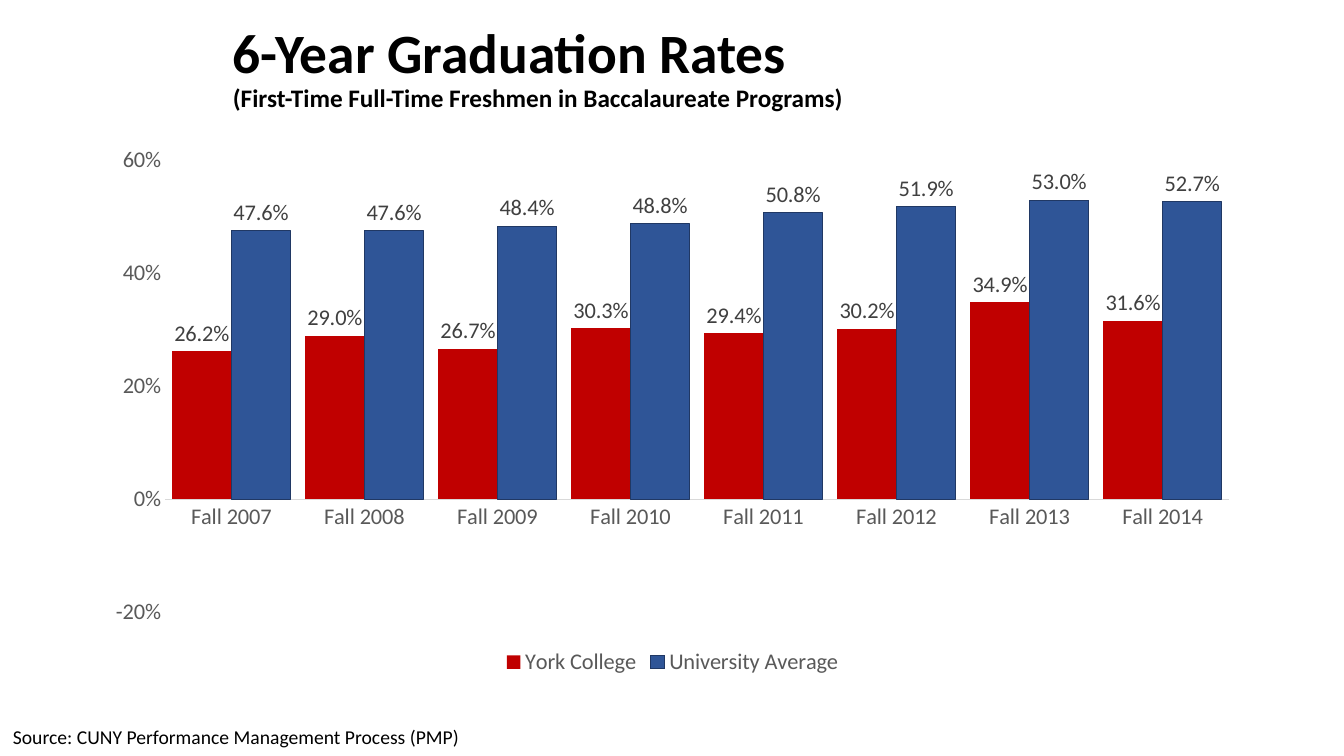
from pptx import Presentation
from pptx.chart.data import CategoryChartData
from pptx.dml.color import RGBColor
from pptx.enum.chart import XL_CHART_TYPE, XL_LABEL_POSITION, XL_LEGEND_POSITION, XL_TICK_MARK
from pptx.enum.text import MSO_ANCHOR, MSO_AUTO_SIZE, PP_ALIGN
from pptx.util import Inches, Pt

BLACK = RGBColor(0x00, 0x00, 0x00)
DARK = RGBColor(0x40, 0x40, 0x40)
GREY = RGBColor(0x59, 0x59, 0x59)
PALE = RGBColor(0xD9, 0xD9, 0xD9)
RED = RGBColor(0xC0, 0x00, 0x00)
BLUE = RGBColor(0x2F, 0x55, 0x97)
NAVY = RGBColor(0x20, 0x38, 0x64)

YEARS = range(2007, 2015)
RATES = [
    ("York College", RED, None, (0.262, 0.29, 0.267, 0.303, 0.294, 0.302, 0.349, 0.316)),
    ("University Average", BLUE, NAVY, (0.476, 0.476, 0.484, 0.488, 0.508, 0.519, 0.53, 0.527)),
]


def set_font(font, size, color, bold=False):
    font.name = "Calibri"
    font.size = Pt(size)
    font.bold = bold
    font.color.rgb = color


def add_title(slide, left, top, width, height):
    title = slide.shapes.title
    title.left, title.top = Inches(left), Inches(top)
    title.width, title.height = Inches(width), Inches(height)
    frame = title.text_frame
    frame.auto_size = MSO_AUTO_SIZE.NONE
    frame.vertical_anchor = MSO_ANCHOR.MIDDLE
    para = frame.paragraphs[0]
    para.text = "6-Year Graduation Rates\n(First-Time Full-Time Freshmen in Baccalaureate Programs)"
    para.alignment = PP_ALIGN.LEFT
    para.line_spacing = 0.9
    for run, size in zip(para.runs, (39.6, 18)):
        set_font(run.font, size, BLACK, True)


def add_rates(slide, left, top, width, height):
    data = CategoryChartData(number_format="0.0%")
    data.categories = [f"Fall {year}" for year in YEARS]
    for name, _, _, values in RATES:
        data.add_series(name, values)
    chart = slide.shapes.add_chart(
        XL_CHART_TYPE.COLUMN_CLUSTERED,
        Inches(left), Inches(top), Inches(width), Inches(height), data,
    ).chart
    set_font(chart.font, 16, BLACK)
    chart.has_title = False
    chart.has_legend = True
    chart.legend.position = XL_LEGEND_POSITION.BOTTOM
    chart.legend.include_in_layout = False
    set_font(chart.legend.font, 16, GREY)

    for axis in (chart.category_axis, chart.value_axis):
        axis.major_tick_mark = axis.minor_tick_mark = XL_TICK_MARK.NONE
        axis.has_major_gridlines = False
        set_font(axis.tick_labels.font, 16, GREY)
    base = chart.category_axis.format.line
    base.color.rgb = PALE
    base.width = Pt(0.75)
    scale = chart.value_axis
    scale.format.line.fill.background()
    scale.minimum_scale, scale.maximum_scale = -0.2, 0.6
    scale.major_unit = 0.2
    scale.tick_labels.number_format = "0%"
    scale.tick_labels.number_format_is_linked = False

    plot = chart.plots[0]
    plot.gap_width = 25
    plot.overlap = 0
    plot.vary_by_categories = False
    for bars, (_, fill, edge, _) in zip(plot.series, RATES):
        bars.invert_if_negative = False
        bars.format.fill.solid()
        bars.format.fill.fore_color.rgb = fill
        if edge:
            bars.format.line.color.rgb = edge
            bars.format.line.width = Pt(0.75)
        else:
            bars.format.line.fill.background()
        labels = bars.data_labels
        labels.show_value = True
        labels.position = XL_LABEL_POSITION.OUTSIDE_END
        labels.number_format = "0.0%"
        labels.number_format_is_linked = False
        set_font(labels.font, 16, DARK)


def add_source(slide, left, top, width, height):
    box = slide.shapes.add_textbox(Inches(left), Inches(top), Inches(width), Inches(height))
    frame = box.text_frame
    frame.word_wrap = False
    frame.auto_size = MSO_AUTO_SIZE.SHAPE_TO_FIT_TEXT
    frame.text = "Source: CUNY Performance Management Process (PMP)"
    set_font(frame.paragraphs[0].runs[0].font, 14, BLACK)


def main():
    deck = Presentation()
    deck.slide_width, deck.slide_height = Inches(13.33), Inches(7.5)
    slide = deck.slides.add_slide(deck.slide_layouts[5])
    add_title(slide, 2.21, 0.29, 10.26, 0.8)
    add_source(slide, 0.03, 7.14, 4.67, 0.34)
    add_rates(slide, 0.92, 1.35, 11.5, 5.4)
    deck.save("out.pptx")


if __name__ == "__main__":
    main()
